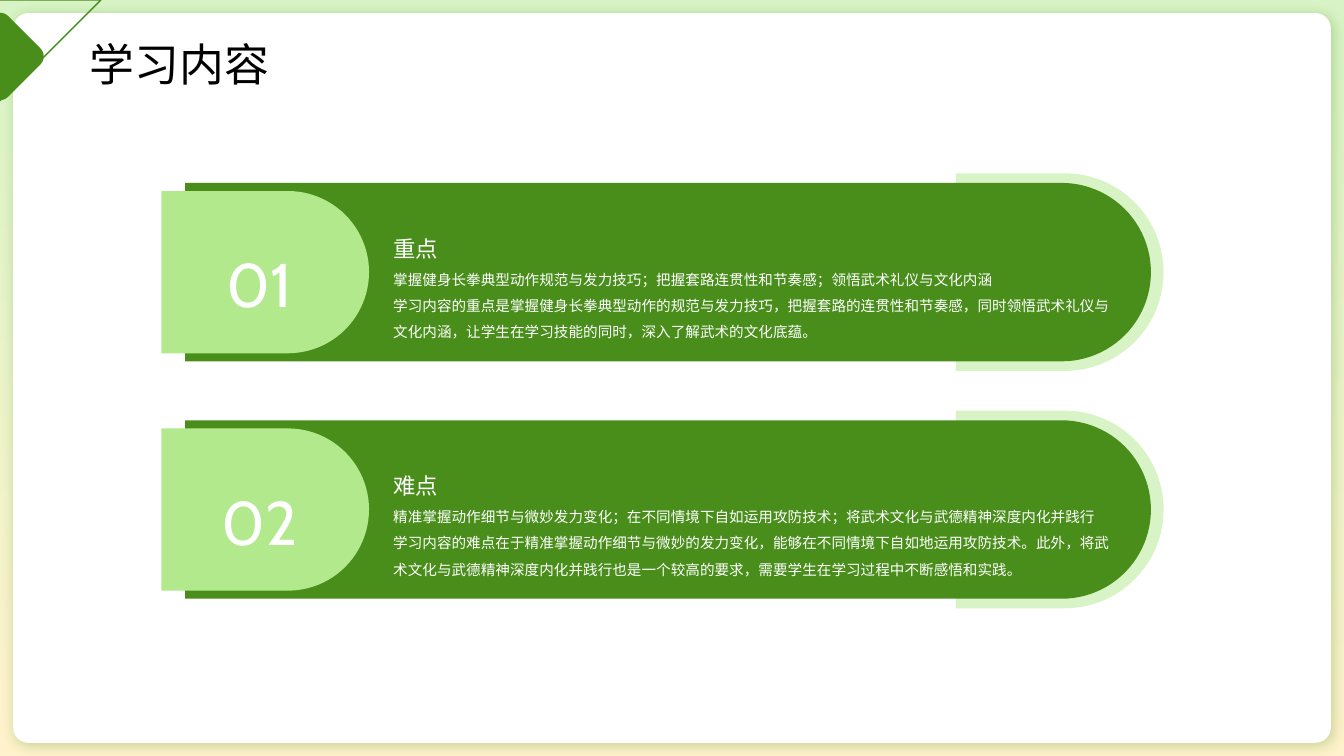
from lxml.etree import SubElement
from pptx import Presentation
from pptx.dml.color import RGBColor
from pptx.enum.shapes import MSO_SHAPE
from pptx.enum.text import MSO_ANCHOR, PP_ALIGN
from pptx.oxml.ns import qn
from pptx.util import Inches, Pt

TITLE = "学习内容"
SECTIONS = [
    ("01", "重点",
     "掌握健身长拳典型动作规范与发力技巧；把握套路连贯性和节奏感；领悟武术礼仪与文化内涵\n"
     "学习内容的重点是掌握健身长拳典型动作的规范与发力技巧，把握套路的连贯性和节奏感，"
     "同时领悟武术礼仪与文化内涵，让学生在学习技能的同时，深入了解武术的文化底蕴。"),
    ("02", "难点",
     "精准掌握动作细节与微妙发力变化；在不同情境下自如运用攻防技术；将武术文化与武德精神深度内化并践行\n"
     "学习内容的难点在于精准掌握动作细节与微妙的发力变化，能够在不同情境下自如地运用攻防技术。"
     "此外，将武术文化与武德精神深度内化并践行也是一个较高的要求，需要学生在学习过程中不断感悟和实践。"),
]
COLORS = {"green": "498E1B", "light": "B2E98C", "pale": "D8F4C6",
          "cream": "FFF2CC", "white": "FFFFFF", "black": "000000"}
CHINESE, NUMERAL = "Noto Sans CJK SC", "Cabin"
WIDTH, HEIGHT = 13.33, 7.5
SECTION_CENTER, SECTION_PITCH = 2.7, 2.355
# left edge, width, height, colour of each tab, back to front
TABS = [(9.48, 2.06, 1.96, "pale"), (1.835, 9.58, 1.77, "green"), (1.6, 2.06, 1.61, "light")]
TEXT_LEFT, TEXT_WIDTH = 3.9, 7.11

presentation = Presentation()
presentation.slide_width, presentation.slide_height = Inches(WIDTH), Inches(HEIGHT)
slide = presentation.slides.add_slide(presentation.slide_layouts[6])


def rgb(color):
    return RGBColor.from_string(COLORS[color])


def add_shape(kind, left, top, width, height, color, rotation=0, adjustments=()):
    shape = slide.shapes.add_shape(kind, *map(Inches, (left, top, width, height)))
    shape.shadow.inherit = False
    shape.rotation = rotation
    for index, value in enumerate(adjustments):
        shape.adjustments[index] = value
    shape.fill.solid()
    shape.fill.fore_color.rgb = rgb(color)
    shape.line.fill.background()
    return shape


def add_tab(left, center, width, height, color):
    """Bar with a round right end: an upright arch turned a quarter."""
    add_shape(MSO_SHAPE.ROUND_2_SAME_RECTANGLE, left + (width - height) / 2, center - width / 2,
              height, width, color, 90, (0.5, 0))


def add_text(text, left, top, width, height, size, spacing, anchor=MSO_ANCHOR.MIDDLE,
             font=CHINESE, color="white", alignment=PP_ALIGN.LEFT):
    frame = slide.shapes.add_textbox(*map(Inches, (left, top, width, height))).text_frame
    frame_format = {"word_wrap": True, "vertical_anchor": anchor, "margin_left": 0,
                    "margin_right": 0, "margin_top": 0, "margin_bottom": 0}
    for name, value in frame_format.items():
        setattr(frame, name, value)
    paragraph = frame.paragraphs[0]
    paragraph.text = text
    paragraph.alignment = alignment
    paragraph.line_spacing = spacing
    for run in paragraph.runs:
        for name, value in {"size": Pt(size), "name": font}.items():
            setattr(run.font, name, value)
        run.font.color.rgb = rgb(color)
        SubElement(run.font._element, qn("a:ea"), typeface=font)


def add_shadow(shape, color, opacity, blur, distance, angle):
    effects = shape._element.spPr.find(qn("a:effectLst"))
    shadow = SubElement(effects, qn("a:outerShdw"), blurRad=str(Pt(blur)), dist=str(Pt(distance)),
                        dir=str(angle * 60000), algn="tl", rotWithShape="0")
    shadow_color = SubElement(shadow, qn("a:srgbClr"), val=COLORS[color])
    SubElement(shadow_color, qn("a:alpha"), val=str(opacity * 1000))


def curve(start, control1, control2, end, steps=8):
    """Points along a cubic curve, without its start."""
    for step in range(1, steps + 1):
        t = step / steps
        yield tuple((1 - t) ** 3 * a + 3 * t * (1 - t) ** 2 * b + 3 * t * t * (1 - t) * c + t ** 3 * d
                    for a, b, c, d in zip(start, control1, control2, end))


def add_corner_outline():
    points = [*curve((0.06, 0.6), (0.14, 0.6), (0.21, 0.57), (0.27, 0.51)),
              (0.83, -0.05), (-0.71, -0.05), (-0.14, 0.51),
              *curve((-0.14, 0.51), (-0.09, 0.57), (-0.01, 0.6), (0.06, 0.6))]
    builder = slide.shapes.build_freeform(0.06, 0.6, scale=Inches(1))
    builder.add_line_segments(points, close=True)
    outline = builder.convert_to_shape()
    outline.shadow.inherit = False
    outline.fill.background()
    outline.line.color.rgb = rgb("green")
    outline.line.width = Pt(1)


def add_section(center, number, heading, body):
    for left, width, height, color in TABS:
        add_tab(left, center, width, height, color)
    add_text(number, 2.07, center - 0.44, 1.01, 0.88, 44, 1.3,
             font=NUMERAL, alignment=PP_ALIGN.CENTER)
    add_text(body, TEXT_LEFT, center - 0.1, TEXT_WIDTH, 0.86, 10.4, 1.5, MSO_ANCHOR.TOP)
    add_text(heading, TEXT_LEFT, center - 0.57, TEXT_WIDTH, 0.47, 16, 1.3, MSO_ANCHOR.BOTTOM)


backdrop = add_shape(MSO_SHAPE.RECTANGLE, 0, 0, WIDTH, HEIGHT, "pale")
backdrop.fill.gradient()
backdrop.fill.gradient_angle = 90
for stop, (position, color) in zip(backdrop.fill.gradient_stops, [(0, "cream"), (1, "pale")]):
    stop.position = position
    stop.color.rgb = rgb(color)

card = add_shape(MSO_SHAPE.ROUNDED_RECTANGLE, 0.13, 0.13, WIDTH - 0.26, HEIGHT - 0.26, "white",
                 adjustments=(0.021,))
add_shadow(card, "green", 30, 10, 3, 45)

for index, section in enumerate(SECTIONS):
    add_section(SECTION_CENTER + index * SECTION_PITCH, *section)

add_corner_outline()
add_shape(MSO_SHAPE.ROUNDED_RECTANGLE, -0.34, 0.22, 0.68, 0.68, "green", 45)
add_text(TITLE, 0.89, 0.26, 8.51, 0.47, 32, 1.5, color="black")

presentation.save("out.pptx")
